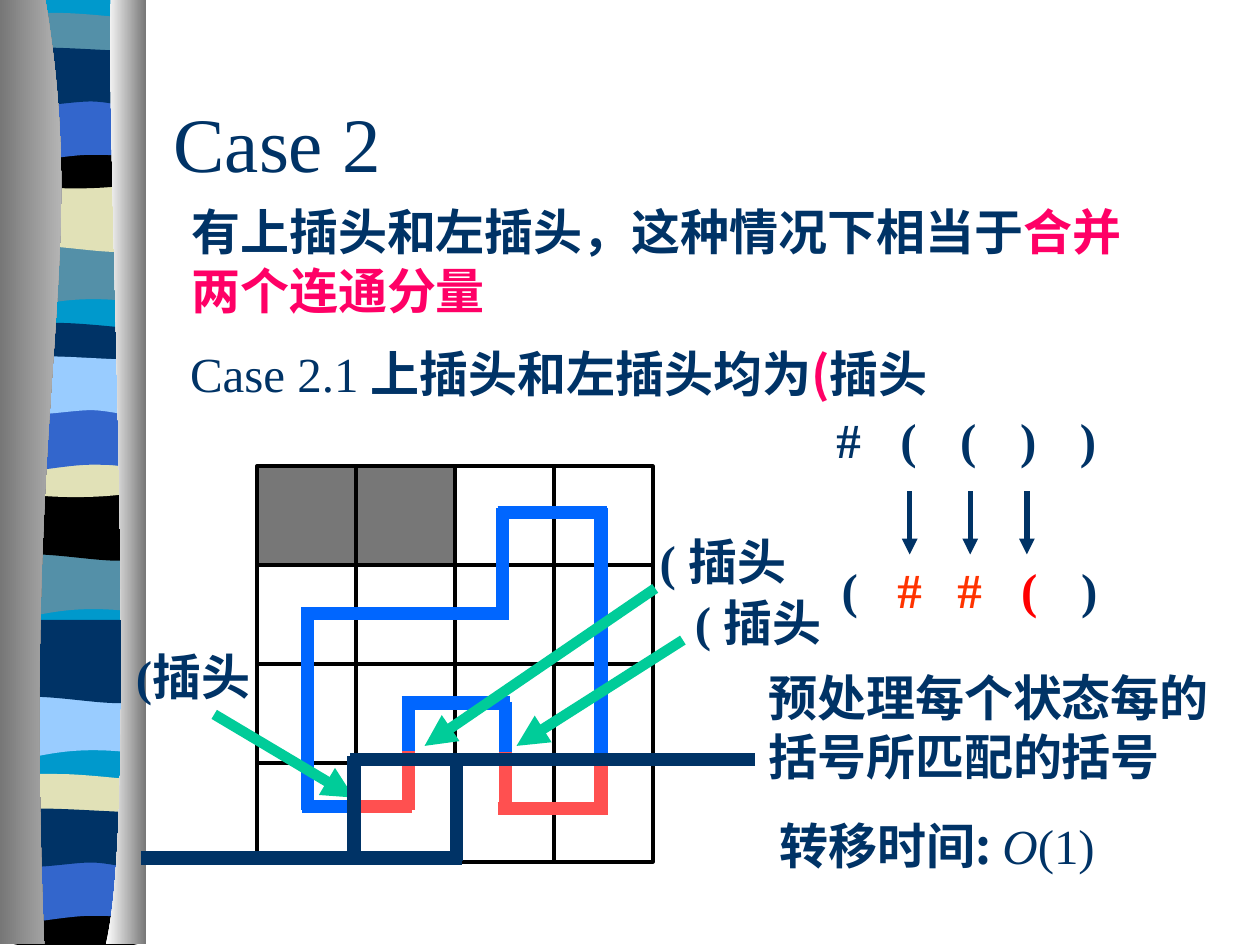
from lxml import etree
from pptx import Presentation
from pptx import util as u
from pptx.dml.color import RGBColor
from pptx.enum import shapes, text
from pptx.oxml.ns import qn

NAVY, BLACK = RGBColor(0, 0x33, 0x66), RGBColor(0, 0, 0)
CYAN, TEAL = RGBColor(0, 0x99, 0xCC), RGBColor(0x54, 0x90, 0xA8)
CREAM, ROYAL = RGBColor(0xE1, 0xE1, 0xB7), RGBColor(0x33, 0x66, 0xCC)
SKY, PINK = RGBColor(0x99, 0xCC, 0xFF), RGBColor(0xFF, 0, 0x66)
GRAY, WHITE = RGBColor(0x77, 0x77, 0x77), RGBColor(0xFF, 0xFF, 0xFF)
SILVER = RGBColor(0xD2, 0xD2, 0xD2)
ORANGE, RED = RGBColor(0xFF, 0x33, 0), RGBColor(0xFF, 0, 0)
CORAL, BLUE = RGBColor(0xFF, 0x50, 0x50), RGBColor(0, 0x66, 0xFF)
GREEN = RGBColor(0, 0xCC, 0x99)
TIMES, NOTO = "Times New Roman", "Noto Sans CJK SC"

# Curtain: a 2-tuple is a corner, a 6-tuple a Bezier curve.
# Each wave is listed with the (top, colour) of the bands that use it.
WAVES = [
    ([(1.14, 0), (1.14, .47), (.39, .39, .24, .55, .05, .47), (.05, 0)],
     [(1.85, TEAL), (4.31, TEAL), (5.43, SKY)]),
    ([(1.14, 0), (1.14, .47), (.96, .55, .39, .42, .06, .47), (.06, 0)],
     [(1.41, CREAM), (3.86, BLACK), (4.99, NAVY)]),
    ([(1.14, .05), (1.14, .29), (.96, .34, .24, .34, .05, .29), (.05, .05),
      (.12, 0, .29, .01, .47, .01), (.65, .01, 1, .04, 1.14, .05)],
     [(.16, TEAL), (2.62, NAVY), (6.2, CREAM)]),
    ([(1.14, 0), (1.14, .32), (.96, .38, .24, .38, .06, .32), (.06, 0),
      (.72, .05, .91, 0, 1.14, 0)],
     [(1.08, BLACK), (3.53, CREAM), (7.12, BLACK)]),
    ([(1.14, 0), (1.14, .47), (.97, .42, .9, .42, .72, .42),
      (.54, .42, .22, .47, .05, .47), (.05, 0)],
     [(.74, ROYAL), (3.2, ROYAL), (6.78, ROYAL)]),
    ([(1.14, .05), (1.14, .35), (1.07, .41, .9, .35, .72, .35),
      (.54, .35, .17, .41, .05, .35), (.05, .05),
      (.21, 0, .79, .05, 1.14, .05)],
     [(.41, NAVY), (2.86, SKY), (6.45, NAVY)]),
]
OVERLAP, RAISE = 1.33, .07  # each wave spills over its band's box
BACKDROP = [(1.14, 0), (1.14, 7.47), (.06, 7.47), (.06, 0)]
LEFT_FOLD = [(.36, 0), (.72, 2.16, .17, 2.96, .35, 7.49), (0, 7.49), (0, 0)]
RIGHT_FOLD = [(.88, 0), (.84, 1.25, 1.11, 6.46, .84, 7.49), (1.16, 7.49), (1.16, 0)]

# Board and paths: segments are x1, y1, x2, y2
GRID_LEFT, GRID_TOP, CELL, GRID_SIZE = 2.04, 3.7, .785, 4
BLOCKED = {(0, 0), (0, 1)}
SHARED = [(2.44, 4.85, 2.44, 6.43), (2.39, 4.87, 4.04, 4.87),
          (3.99, 4.03, 3.99, 4.9), (3.95, 4.07, 4.82, 4.07),
          (3.19, 5.58, 4.05, 5.58)]
FULL_PATH = SHARED + [(4.77, 4.03, 4.77, 6.47), (3.95, 6.42, 4.82, 6.42),
                      (4.01, 5.57, 4.01, 6.44), (3.24, 5.55, 3.24, 6.43),
                      (2.4, 6.4, 3.27, 6.4)]
DONE_PATH = SHARED + [(4.77, 4.03, 4.77, 6), (4.01, 5.57, 4.01, 5.97),
                      (3.24, 5.55, 3.24, 5.96), (2.4, 6.4, 2.8, 6.4)]
CONTOURS = [(1.27, 6.81, 3.67, 6.81), (3.6, 6.03, 5.99, 6.03), (3.62, 6, 3.62, 6.83),
            (1.12, 6.81, 2.82, 6.81), (2.78, 6.03, 5.84, 6.03), (2.81, 6, 2.81, 6.83)]
POINTERS = [(5.2, 4.67, 3.37, 5.92), (1.7, 5.67, 2.81, 6.33), (5.42, 5.08, 4.1, 5.92)]
STEPS = [(x, 3.9, x, 4.4) for x in (7.22, 7.7, 8.15)]

# Bracket states: left, top, (symbol, colour)
STATE_PITCH = .475
STATES = [
    (6.5, 3.25, [("#", NAVY), ("(", NAVY), ("(", NAVY), (")", NAVY), (")", NAVY)]),
    (6.51, 4.44, [("(", NAVY), ("#", ORANGE), ("#", ORANGE), ("(", RED), (")", NAVY)]),
]

# Texts: box, then runs of (words, font, colour, style letters)
PLUG = [(" ( 插头", TIMES, NAVY, "b")]
TEXTS = [
    ((1.42, 1.55, 7.75, 1.03), [("有上插头和左插头，这种情况下相当于", NOTO, NAVY, "b"),
                                ("合并两个连通分量", NOTO, PINK, "b")]),
    ((6, 5.25, 3.75, 1.03), [("预处理每个状态每的括号所匹配的括号", NOTO, NAVY, "b")]),
    ((6.09, 6.42, 3.75, .57), [("转移时间: ", NOTO, NAVY, "b"),
                               ("O", TIMES, NAVY, "i"), ("(1)", TIMES, NAVY, "")]),
    ((5.04, 4.17, 1.58, .57), PLUG),
    ((5.32, 4.65, 1.58, .57), PLUG),
    ((.98, 5.08, 1.25, .57), [("(插头", TIMES, NAVY, "b")]),
    ((1.41, 2.68, 7.59, .57), [("Case 2.1 ", TIMES, NAVY, ""),
                               ("上插头和左插头均为", NOTO, NAVY, "b"),
                               ("(", NOTO, PINK, "b"), ("插头", NOTO, NAVY, "b")]),
]

prs = Presentation()
prs.slide_width, prs.slide_height = u.Inches(10), u.Inches(7.5)
slide = prs.slides.add_slide(prs.slide_layouts[6])
canvas = slide.shapes


def add_outline(outline, top, *colors, stretch=1, lift=0):
    """One colour fills solid, two make a left-to-right gradient."""
    points = [(u.Inches(part[i]), u.Inches(part[i + 1] + top))
              for part in outline for i in range(0, len(part), 2)]
    builder = canvas.build_freeform(*points[0], scale=1)
    builder.add_line_segments(points[1:], close=True)
    shape = builder.convert_to_shape()
    corners = shape._element.iter(qn("a:lnTo"))
    corners = iter(list(corners))
    for part in outline[1:]:
        corner = next(corners)
        if len(part) == 6:
            corner.tag = qn("a:cubicBezTo")
            for _ in range(2):
                control = next(corners)
                corner.append(control[0])
                control.getparent().remove(control)
    for point in shape._element.iter(qn("a:pt")):
        point.set("y", str(round(int(point.get("y")) * stretch - u.Inches(lift))))
    shape.shadow.inherit = False
    shape.line.fill.background()
    if len(colors) == 1:
        shape.fill.solid()
        shape.fill.fore_color.rgb = colors[0]
    else:
        shape.fill.gradient()
        shape.fill.gradient_angle = 0
        for stop, color in zip(shape.fill.gradient_stops, colors):
            stop.color.rgb = color


def add_lines(segments, color, width, arrow=False):
    for segment in segments:
        line = canvas.add_connector(shapes.MSO_CONNECTOR.STRAIGHT, *map(u.Inches, segment))
        line.line.color.rgb = color
        line.line.width = u.Pt(width)
        if arrow:
            etree.SubElement(line.line._get_or_add_ln(), qn("a:tailEnd"), type="triangle")
        etree.SubElement(line._element.spPr, qn("a:effectLst"))


def add_text(box, runs, size=28, centred=False, middle=False):
    frame = canvas.add_textbox(*map(u.Inches, box)).text_frame
    frame.word_wrap = not centred
    if middle:
        frame.vertical_anchor = text.MSO_ANCHOR.MIDDLE
    paragraph = frame.paragraphs[0]
    if centred:
        paragraph.alignment = text.PP_ALIGN.CENTER
    for words, face, color, style in runs:
        run = paragraph.add_run()
        run.text = words
        font = run.font
        font.size, font.name, font.color.rgb = u.Pt(size), face, color
        font.bold, font.italic = "b" in style, "i" in style
        etree.SubElement(run._r.get_or_add_rPr(), qn("a:ea"), typeface=NOTO)


add_outline(BACKDROP, 0, CYAN)
for wave, bands in WAVES:
    for top, color in bands:
        add_outline(wave, top, color, stretch=OVERLAP, lift=RAISE)
add_outline(LEFT_FOLD, 0, GRAY, SILVER)
add_outline(RIGHT_FOLD, 0, WHITE, GRAY)

add_text((1.28, .5, 8.5, 1.25), [("Case 2", TIMES, NAVY, "")], size=44, middle=True)

for row in range(GRID_SIZE):
    for col in range(GRID_SIZE):
        cell = canvas.add_shape(
            shapes.MSO_SHAPE.RECTANGLE, u.Inches(GRID_LEFT + col * CELL),
            u.Inches(GRID_TOP + row * CELL), u.Inches(CELL), u.Inches(CELL))
        cell.shadow.inherit = False
        cell.line.color.rgb = BLACK
        cell.line.width = u.Pt(2.25)
        if (row, col) in BLOCKED:
            cell.fill.solid()
            cell.fill.fore_color.rgb = GRAY
        else:
            cell.fill.background()

add_lines(FULL_PATH, CORAL, 7.5)
for box, runs in TEXTS:
    add_text(box, runs)
for left, top, symbols in STATES:
    for i, (symbol, color) in enumerate(symbols):
        add_text((left + i * STATE_PITCH, top, .47, .47),
                 [(symbol, TIMES, color, "b")], centred=True, middle=True)
add_lines(STEPS, NAVY, 3, arrow=True)
add_lines(DONE_PATH, BLUE, 7.5)
add_lines(POINTERS, GREEN, 6, arrow=True)
add_lines(CONTOURS, NAVY, 7.5)

prs.save("out.pptx")
